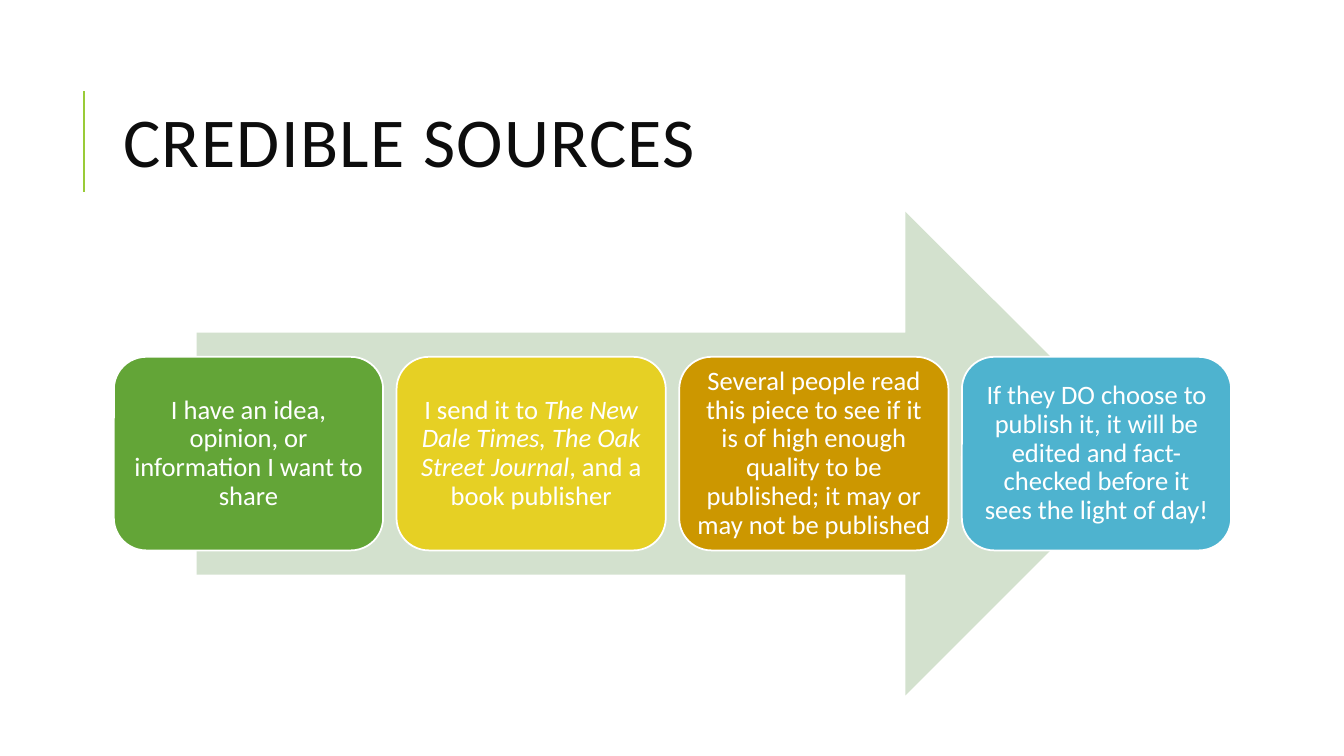
from pptx import Presentation
from pptx import util as u
from pptx.dml.color import RGBColor
from pptx.enum import shapes, text
from pptx.oxml import parse_xml
from pptx.oxml.ns import nsdecls

FONT = "Calibri"
WHITE = "FFFFFF"
LEFT, TOP, WIDE, HIGH = 1.13, 3.54, 2.67, 1.92
STEP = WIDE * 1.05

# Each step: fill, then (words, italic) runs
STEPS = [
    ("63A537", [("I have an idea, opinion, or information I want to share", False)]),
    ("E6D024", [("I send it to ", False),
                ("The New Dale Times, The Oak Street Journal", True),
                (", and a book publisher", False)]),
    ("CC9700", [("Several people read this piece to see if it is of high enough "
                 "quality to be published; it may or may not be published", False)]),
    ("4EB3CF", [("If they DO choose to publish it, it will be edited and "
                 "fact-checked before it sees the light of day!", False)]),
]


def paint(target, code):
    """Give a fill or a line a solid colour."""
    fill = getattr(target, "fill", target)
    fill.solid()
    fill.fore_color.rgb = RGBColor.from_string(code)


def style(run, size, code):
    run.font.name = FONT
    run.font.size = u.Pt(size)
    paint(run.font, code)


def add_title(slide, words):
    title = slide.shapes.title
    title.left, title.top = u.Inches(1.12), u.Inches(0.64)
    title.width, title.height = u.Inches(10.63), u.Inches(1.64)
    frame = title.text_frame
    frame.text = words
    frame.auto_size = text.MSO_AUTO_SIZE.NONE
    frame.vertical_anchor = text.MSO_ANCHOR.MIDDLE
    para = frame.paragraphs[0]
    para.alignment = text.PP_ALIGN.LEFT
    para.line_spacing = 0.8
    run = para.runs[0]
    style(run, 50, "0D0D0D")
    run.font._element.set("spc", "100")


def add_rule(slide, x, top, bottom):
    rule = slide.shapes.add_connector(
        shapes.MSO_CONNECTOR.STRAIGHT,
        u.Inches(x), u.Inches(bottom), u.Inches(x), u.Inches(top))
    paint(rule.line, "99CB38")
    rule.line.width = u.Pt(1.5)
    rule._element.spPr.append(parse_xml(f"<a:effectLst {nsdecls('a')}/>"))


def add_block(slide, kind, box, code):
    block = slide.shapes.add_shape(kind, *map(u.Inches, box))
    block.shadow.inherit = False
    paint(block, code)
    block.line.fill.background()
    return block


def add_step(slide, index, code, parts):
    box = (LEFT + index * STEP, TOP, WIDE, HIGH)
    card = add_block(slide, shapes.MSO_SHAPE.ROUNDED_RECTANGLE, box, code)
    paint(card.line, WHITE)
    card.line.width = u.Pt(1.25)
    frame = card.text_frame
    frame.word_wrap = True
    frame.vertical_anchor = text.MSO_ANCHOR.MIDDLE
    for side in ("left", "top", "right", "bottom"):
        setattr(frame, f"margin_{side}", u.Inches(0.08))
    para = frame.paragraphs[0]
    para.alignment = text.PP_ALIGN.CENTER
    para.line_spacing = 0.9
    for words, slant in parts:
        run = para.add_run()
        run.text = words
        style(run, 19, WHITE)
        run.font.italic = slant


def main():
    deck = Presentation()
    deck.slide_width, deck.slide_height = u.Inches(13.33), u.Inches(7.5)
    slide = deck.slides.add_slide(deck.slide_layouts[5])
    paint(slide.background, WHITE)
    add_rule(slide, 0.83, 0.9, 1.9)
    add_title(slide, "CREDIBLE SOURCES")
    add_block(slide, shapes.MSO_SHAPE.RIGHT_ARROW, (1.95, 2.1, 9.43, 4.8), "D3E1CE")
    for index, (code, parts) in enumerate(STEPS):
        add_step(slide, index, code, parts)
    deck.save("out.pptx")


if __name__ == "__main__":
    main()
